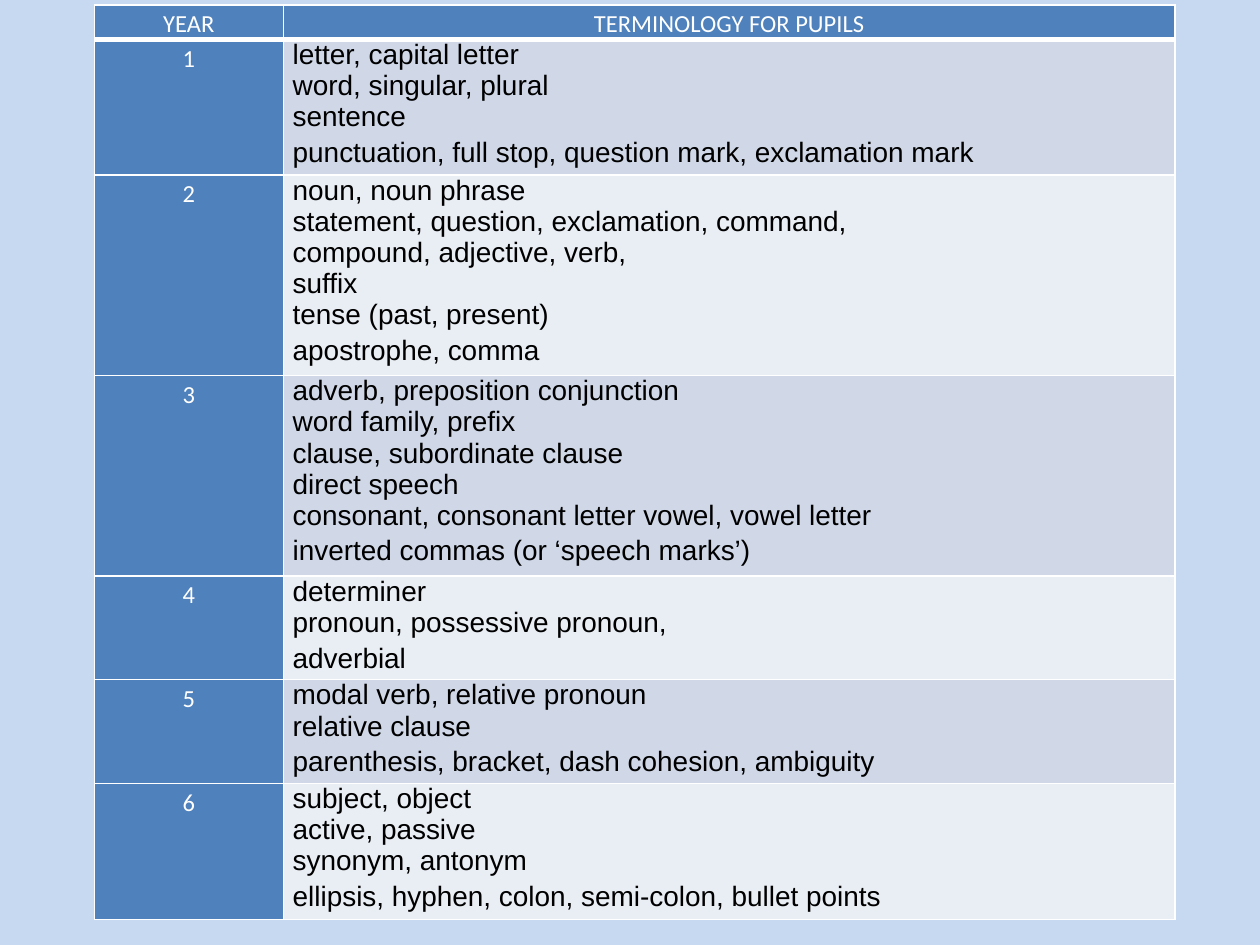
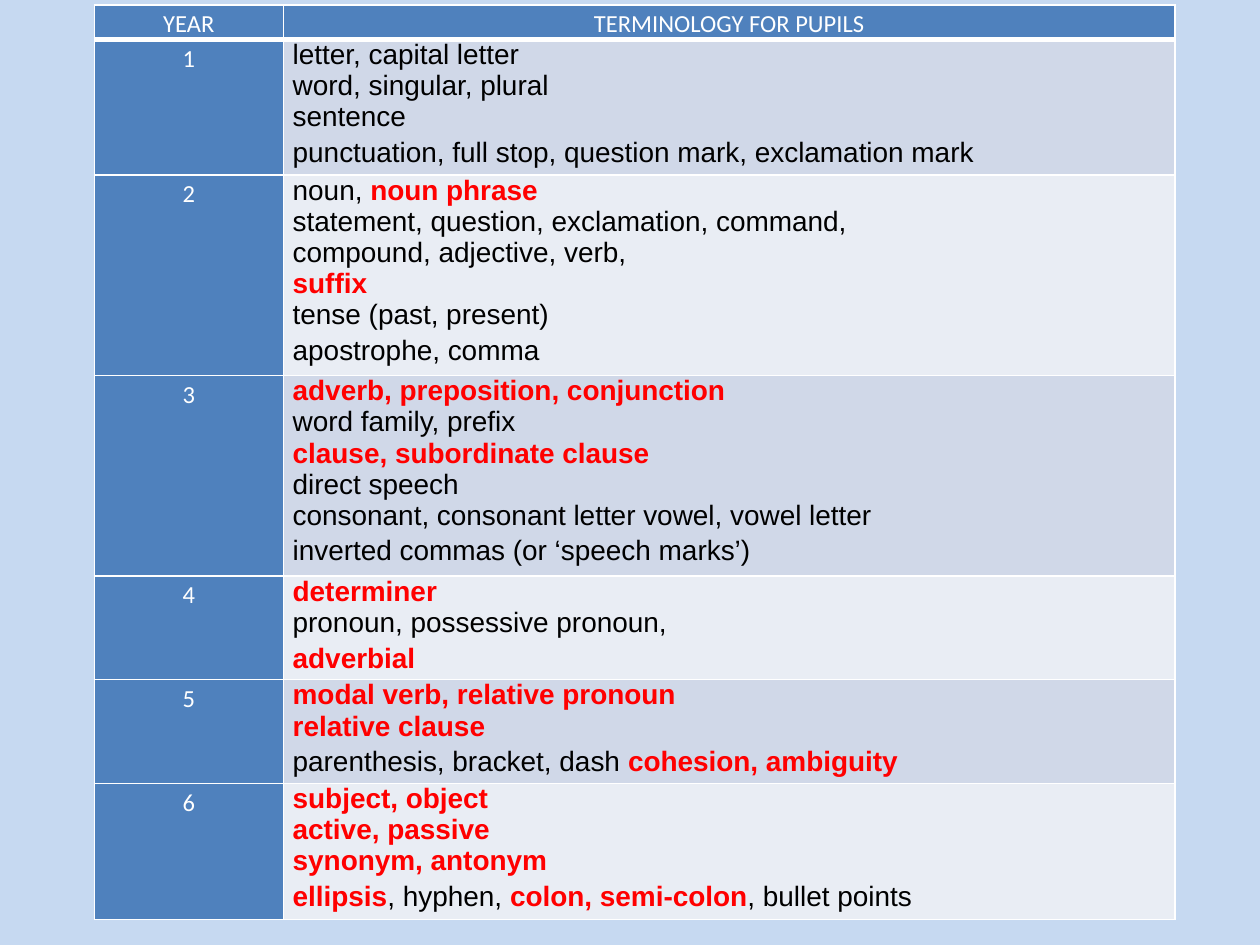
from lxml import etree
from pptx import Presentation
from pptx.dml.color import RGBColor
from pptx.enum.text import PP_ALIGN
from pptx.oxml.ns import qn
from pptx.util import Cm, Pt

CENTER, LEFT = PP_ALIGN.CENTER, PP_ALIGN.LEFT
SKY = RGBColor(0xC6, 0xD9, 0xF1)
BLUE = RGBColor(0x4F, 0x81, 0xBD)
BANDS = RGBColor(0xD0, 0xD8, 0xE8), RGBColor(0xE9, 0xED, 0xF4)
WHITE = RGBColor(0xFF, 0xFF, 0xFF)
BLACK = RGBColor(0x00, 0x00, 0x00)
RED = RGBColor(0xFF, 0x00, 0x00)

HEADINGS = ["YEAR", "TERMINOLOGY FOR PUPILS"]
KEY_MARK = "*"
MARKED_TERMS = [
    ["letter, capital letter", "word, singular, plural", "sentence",
     "punctuation, full stop, question mark, exclamation mark"],
    ["noun, *noun phrase*", "statement, question, exclamation, command,",
     "compound, adjective, verb,", "*suffix*", "tense (past, present)",
     "apostrophe, comma"],
    ["*adverb, preposition, conjunction*", "word family, prefix",
     "*clause, subordinate clause*", "direct speech",
     "consonant, consonant letter vowel, vowel letter",
     "inverted commas (or ‘speech marks’)"],
    ["*determiner*", "pronoun, possessive pronoun,", "*adverbial*"],
    ["*modal verb, relative pronoun*", "*relative clause*",
     "parenthesis, bracket, dash *cohesion, ambiguity*"],
    ["*subject, object*", "*active, passive*", "*synonym, antonym*",
     "*ellipsis*, hyphen, *colon, semi-colon*, bullet points"],
]


def write_text(paragraph, text, *, font, size, color, align=LEFT, spacing=None):
    """Write text into a paragraph, with the marked parts bold and red."""
    paragraph.alignment = align
    paragraph.line_spacing = spacing
    for index, part in enumerate(text.split(KEY_MARK)):
        if part:
            run = paragraph.add_run()
            run.text = part
            is_key = index % 2 == 1
            run.font.name = font
            run.font.size = Pt(size)
            run.font.bold = is_key
            run.font.color.rgb = RED if is_key else color


def plain_terms(lines):
    """Return the lines without key marks, as the first slide words them."""
    return [line.replace(KEY_MARK, "").replace("preposition, ", "preposition ")
            for line in lines]


class TerminologyDeck:
    """Hold the presentation, its style and the current slide."""

    label_style = dict(font="Calibri", size=14, color=WHITE, align=CENTER)
    term_style = dict(font="Arial", size=16, color=BLACK)
    last_line_spacing = 1.15

    def __init__(self):
        """Start an empty presentation in 4:3 format."""
        self.presentation = Presentation()
        self.presentation.slide_width = Cm(25.4)
        self.presentation.slide_height = Cm(19.05)
        self.slide = None

    def add_slide(self):
        """Add a blank slide with the shared background."""
        self.slide = self.presentation.slides.add_slide(
            self.presentation.slide_layouts[6])
        self.slide.background.fill.solid()
        self.slide.background.fill.fore_color.rgb = SKY

    def add_borders(self, cell, bottom):
        """Draw white borders around a cell."""
        properties = cell._tc.get_or_add_tcPr()
        for index, side in enumerate("LRTB"):
            width = bottom if side == "B" else 1
            line = etree.Element(qn(f"a:ln{side}"), w=str(Pt(width)))
            fill = etree.SubElement(line, qn("a:solidFill"))
            etree.SubElement(fill, qn("a:srgbClr"), val=str(WHITE))
            properties.insert(index, line)

    def fill_cell(self, cell, lines, color, style, bottom=1):
        """Fill a cell with one paragraph per line."""
        cell.fill.solid()
        cell.fill.fore_color.rgb = color
        cell.margin_left = cell.margin_right = Cm(0.19)
        cell.margin_top = cell.margin_bottom = 0
        self.add_borders(cell, bottom)
        frame = cell.text_frame
        for index, line in enumerate(lines):
            paragraph = frame.add_paragraph() if index else frame.paragraphs[0]
            is_last = index == len(lines) - 1
            write_text(paragraph, line, **style,
                       spacing=self.last_line_spacing if is_last else None)

    def add_terms_table(self, terms):
        """Add the table of years and terms, each row as high as its lines."""
        heights = [0.69] + [0.65 * len(lines) + 0.14 for lines in terms]
        widths = [3.81, 17.98]
        table = self.slide.shapes.add_table(
            len(heights), len(widths), Cm(1.9), Cm(0.1),
            Cm(sum(widths)), Cm(sum(heights))).table
        for column, width in zip(table.columns, widths):
            column.width = Cm(width)
        for row, height in zip(table.rows, heights):
            row.height = Cm(height)
        for column, heading in enumerate(HEADINGS):
            self.fill_cell(table.cell(0, column), [heading], BLUE,
                           self.label_style, bottom=3)
        for year, lines in enumerate(terms, start=1):
            self.fill_cell(table.cell(year, 0), [str(year)], BLUE, self.label_style)
            self.fill_cell(table.cell(year, 1), lines, BANDS[(year - 1) % 2],
                           self.term_style)


def main():
    """Build the plain and the highlighted terminology slides."""
    deck = TerminologyDeck()
    for terms in ([plain_terms(lines) for lines in MARKED_TERMS], MARKED_TERMS):
        deck.add_slide()
        deck.add_terms_table(terms)
    deck.presentation.save("out.pptx")


if __name__ == "__main__":
    main()
